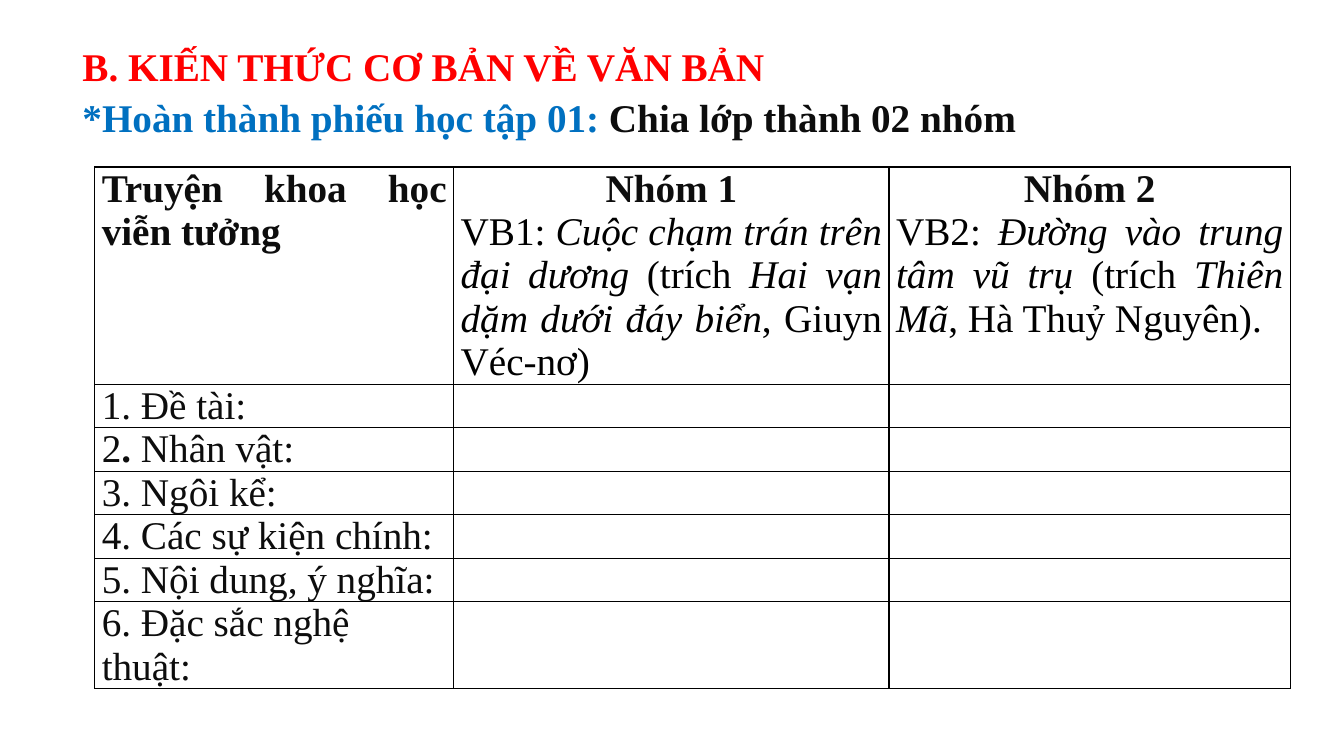
from dataclasses import dataclass

from lxml import etree
from pptx import Presentation
from pptx.dml import color
from pptx.enum import text
from pptx.oxml import ns
from pptx.util import Inches, Pt


@dataclass(frozen=True)
class Theme:
    font: str = "Times New Roman"
    size: int = 28
    heading: str = "FF0000"
    task: str = "0070C0"
    label: str = "0D0D0D"
    body: str = "000000"
    paper: str = "FFFFFF"
    border: str = "000000"
    border_width: float = 1
    heading_spacing: float = 1.08


THEME = Theme()
WIDTH, HEIGHT = 13.33, 7.5
LINE_ROWS = 5.75
COLUMN_SHARES = (26.7, 32.4, 29.85)
JUSTIFY = text.PP_ALIGN.JUSTIFY
CENTER = text.PP_ALIGN.CENTER
LEFT = text.PP_ALIGN.LEFT


def across(share):
    return Inches(WIDTH * share / 100)


def down(share):
    return Inches(HEIGHT * share / 100)


def span(words, ink=THEME.label, bold=False, italic=False):
    return words, ink, bold, italic


def story(words, italic=False):
    return span(words, THEME.body, italic=italic)


def write_paragraphs(frame, paragraphs, spacing=None):
    for index, (align, spans) in enumerate(paragraphs):
        paragraph = frame.add_paragraph() if index else frame.paragraphs[0]
        paragraph.alignment = align
        if spacing:
            paragraph.line_spacing = spacing
        for words, ink, bold, italic in spans:
            run = paragraph.add_run()
            run.text = words
            run.font.name = THEME.font
            run.font.size = Pt(THEME.size)
            run.font.bold = bold
            run.font.italic = italic
            run.font.color.rgb = color.RGBColor.from_string(ink)


def add_heading(slide, paragraphs):
    heading = slide.shapes.add_textbox(across(5.4), down(4.5), across(83.3), down(13.9))
    heading.text_frame.word_wrap = True
    write_paragraphs(heading.text_frame, paragraphs, THEME.heading_spacing)


def outline_cell(cell):
    properties = cell._tc.get_or_add_tcPr()
    for position, side in enumerate(("a:lnL", "a:lnR", "a:lnT", "a:lnB")):
        edge = etree.Element(ns.qn(side), w=str(Pt(THEME.border_width)))
        fill = etree.SubElement(edge, ns.qn("a:solidFill"))
        etree.SubElement(fill, ns.qn("a:srgbClr"), val=THEME.border)
        properties.insert(position, edge)


def style_cell(cell):
    cell.margin_left = cell.margin_right = Inches(0.07)
    cell.margin_top = cell.margin_bottom = 0
    cell.fill.solid()
    cell.fill.fore_color.rgb = color.RGBColor.from_string(THEME.paper)
    outline_cell(cell)


def add_worksheet(slide, rows):
    heights = [down(lines * LINE_ROWS) for lines, _ in rows]
    worksheet = slide.shapes.add_table(
        len(rows), len(COLUMN_SHARES), across(7.05), down(22.1),
        across(sum(COLUMN_SHARES)), sum(heights),
    ).table
    worksheet.first_row = worksheet.horz_banding = False
    for column, share in zip(worksheet.columns, COLUMN_SHARES):
        column.width = across(share)
    for row, height, (_, contents) in zip(worksheet.rows, heights, rows):
        row.height = height
        for cell in row.cells:
            style_cell(cell)
        for cell, paragraphs in zip(row.cells, contents):
            write_paragraphs(cell.text_frame, paragraphs)


def group(name, spans):
    return [(CENTER, [span(name, bold=True)]), (JUSTIFY, spans)]


def criterion(*spans, lines=1, align=JUSTIFY):
    return lines, [[(align, spans)]]


def main():
    deck = Presentation()
    deck.slide_width, deck.slide_height = Inches(WIDTH), Inches(HEIGHT)
    slide = deck.slides.add_slide(deck.slide_layouts[6])

    topic = [(JUSTIFY, [span("Truyện khoa học viễn tưởng", bold=True)])]
    first_group = group("Nhóm 1", [
        story("VB1: "),
        story("Cuộc chạm trán trên đại dương ", italic=True),
        story("(trích "),
        story("Hai vạn dặm dưới đáy biển", italic=True),
        story(", Giuyn Véc-nơ)"),
    ])
    second_group = group("Nhóm 2", [
        story("VB2: "),
        story("Đường vào trung tâm vũ trụ", italic=True),
        story(" (trích "),
        story("Thiên Mã", italic=True),
        story(", Hà Thuỷ Nguyên)."),
    ])
    add_worksheet(slide, [
        (5, [topic, first_group, second_group]),
        criterion(span("1. Đề tài:")),
        criterion(span("2"), span(". ", bold=True), span("Nhân vật:")),
        criterion(span("3. Ngôi kể:")),
        criterion(span("4. Các sự kiện chính:")),
        criterion(span("5. Nội dung, ý nghĩa:")),
        criterion(span("6. Đặc sắc nghệ thuật:"), lines=2, align=LEFT),
    ])
    add_heading(slide, [
        (LEFT, [span("B. KIẾN THỨC CƠ BẢN VỀ VĂN BẢN", THEME.heading, bold=True)]),
        (JUSTIFY, [
            span("*Hoàn thành phiếu học tập 01: ", THEME.task, bold=True),
            span("Chia lớp thành 02 nhóm", bold=True),
        ]),
    ])
    deck.save("out.pptx")


if __name__ == "__main__":
    main()
